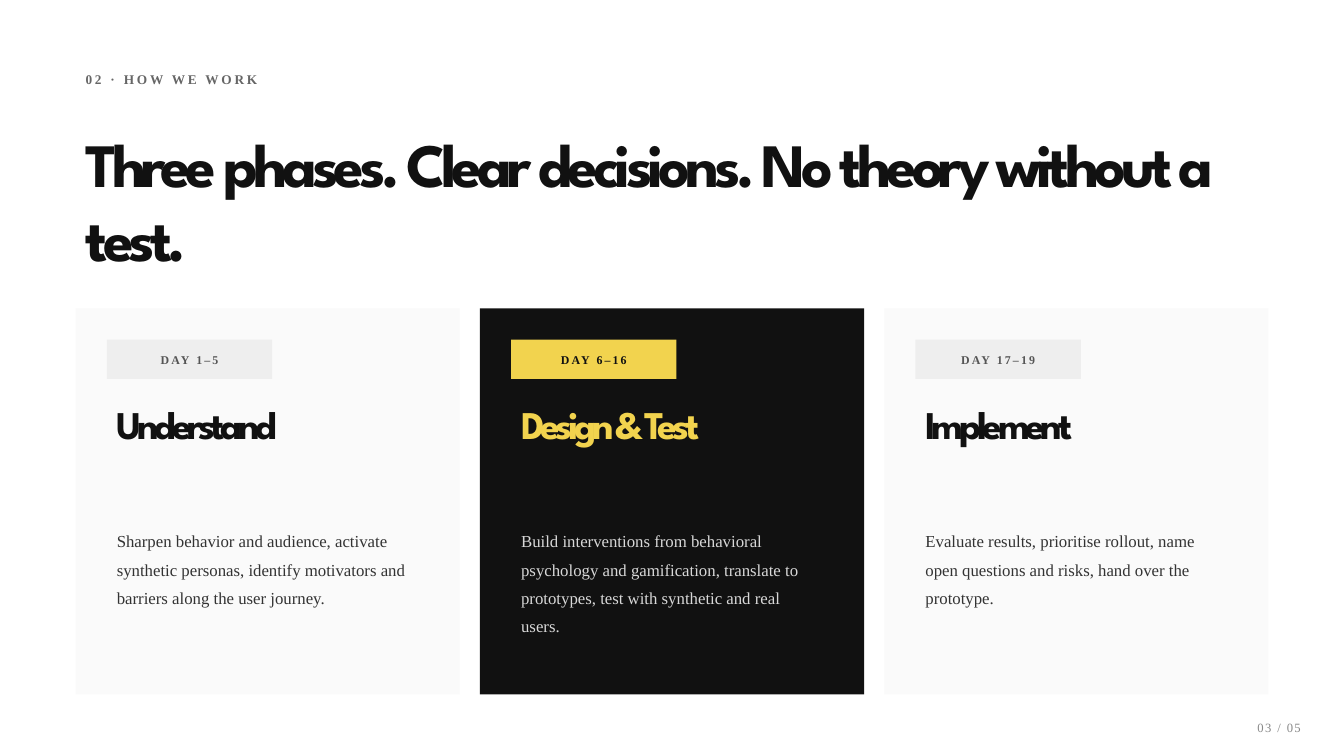
from dataclasses import dataclass

from pptx import Presentation
from pptx.dml.color import RGBColor
from pptx.enum.shapes import MSO_SHAPE as ShapeKind
from pptx.enum.text import MSO_ANCHOR as Anchor, MSO_AUTO_SIZE as AutoSize, PP_ALIGN as Align
from pptx.shapes.autoshape import Shape
from pptx.slide import Slide
from pptx.util import Inches, Pt

INK = RGBColor(0x11, 0x11, 0x11)
YELLOW = RGBColor(0xF2, 0xD3, 0x4E)
PALE = RGBColor(0xFA, 0xFA, 0xFA)
TAG_GREY = RGBColor(0xEE, 0xEE, 0xEE)
TAG_TEXT = RGBColor(0x55, 0x55, 0x55)
BODY_DARK = RGBColor(0x33, 0x33, 0x33)
BODY_LIGHT = RGBColor(0xD8, 0xD8, 0xD8)
EYEBROW_GREY = RGBColor(0x66, 0x66, 0x66)
PAGE_GREY = RGBColor(0x88, 0x88, 0x88)

DISPLAY = "League Spartan"
SERIF = "Times New Roman"

SLIDE_WIDTH, SLIDE_HEIGHT = 13.33, 7.5
MARGIN = 0.75
CONTENT_WIDTH = SLIDE_WIDTH - 2 * MARGIN
COLUMNS = 3
GUTTER = 0.2
COLUMN_WIDTH = (CONTENT_WIDTH - (COLUMNS - 1) * GUTTER) / COLUMNS
CARD_TOP, CARD_HEIGHT = 3.06, 3.83
CARD_PADDING = 0.31
INNER_WIDTH = COLUMN_WIDTH - 2 * CARD_PADDING


@dataclass(frozen=True)
class Box:
    left: float
    top: float
    width: float
    height: float


@dataclass(frozen=True)
class Style:
    font: str
    size: float
    bold: bool = False
    tracking: float = 0
    line_spacing: float = 1.0
    align: Align = Align.LEFT
    anchor: Anchor = Anchor.TOP


@dataclass(frozen=True)
class Theme:
    card: RGBColor
    tag: RGBColor
    tag_text: RGBColor
    heading: RGBColor
    body: RGBColor


@dataclass(frozen=True)
class Phase:
    days: str
    name: str
    description: str
    theme: Theme


EYEBROW = Style(SERIF, 9.5, bold=True, tracking=2)
TITLE = Style(DISPLAY, 44, bold=True, tracking=-3.5)
TAG = Style(SERIF, 8.5, bold=True, tracking=1.5, align=Align.CENTER, anchor=Anchor.MIDDLE)
HEADING = Style(DISPLAY, 28, bold=True, tracking=-3)
BODY = Style(SERIF, 12, line_spacing=1.4)
PAGE = Style(SERIF, 9, tracking=1, align=Align.RIGHT)

LIGHT = Theme(PALE, TAG_GREY, TAG_TEXT, INK, BODY_DARK)
DARK = Theme(INK, YELLOW, INK, YELLOW, BODY_LIGHT)

PHASES = (
    Phase("DAY 1–5", "Understand",
          "Sharpen behavior and audience, activate synthetic personas, "
          "identify motivators and barriers along the user journey.", LIGHT),
    Phase("DAY 6–16", "Design & Test",
          "Build interventions from behavioral psychology and gamification, "
          "translate to prototypes, test with synthetic and real users.", DARK),
    Phase("DAY 17–19", "Implement",
          "Evaluate results, prioritise rollout, name open questions and risks, "
          "hand over the prototype.", LIGHT),
)


def place(shape: Shape, box: Box) -> None:
    shape.left, shape.top = Inches(box.left), Inches(box.top)
    shape.width, shape.height = Inches(box.width), Inches(box.height)


def write(shape: Shape, text: str, style: Style, color: RGBColor) -> None:
    frame = shape.text_frame
    frame.word_wrap = True
    frame.auto_size = AutoSize.NONE
    frame.vertical_anchor = style.anchor
    paragraph = frame.paragraphs[0]
    paragraph.alignment = style.align
    paragraph.line_spacing = style.line_spacing
    run = paragraph.add_run()
    run.text = text
    run.font.name = style.font
    run.font.size = Pt(style.size)
    run.font.bold = style.bold
    run.font.color.rgb = color
    run._r.get_or_add_rPr().set("spc", str(round(style.tracking * 100)))


def add_text(slide: Slide, box: Box, text: str, style: Style, color: RGBColor) -> None:
    shape = slide.shapes.add_textbox(0, 0, 0, 0)
    place(shape, box)
    write(shape, text, style, color)


def add_panel(slide: Slide, box: Box, fill: RGBColor) -> Shape:
    shape = slide.shapes.add_shape(ShapeKind.RECTANGLE, 0, 0, 0, 0)
    place(shape, box)
    shape.shadow.inherit = False
    shape.fill.solid()
    shape.fill.fore_color.rgb = fill
    shape.line.fill.background()
    return shape


def add_phase(slide: Slide, column: int, phase: Phase) -> None:
    theme = phase.theme
    left = MARGIN + column * (COLUMN_WIDTH + GUTTER)
    inner = left + CARD_PADDING
    add_panel(slide, Box(left, CARD_TOP, COLUMN_WIDTH, CARD_HEIGHT), theme.card)
    tag = add_panel(slide, Box(inner, CARD_TOP + CARD_PADDING, 1.64, 0.39), theme.tag)
    write(tag, phase.days, TAG, theme.tag_text)
    add_text(slide, Box(inner, CARD_TOP + 0.86, INNER_WIDTH, 1.09),
             phase.name, HEADING, theme.heading)
    add_text(slide, Box(inner, CARD_TOP + 2.08, INNER_WIDTH, 1.53),
             phase.description, BODY, theme.body)


def main() -> None:
    presentation = Presentation()
    presentation.slide_width = Inches(SLIDE_WIDTH)
    presentation.slide_height = Inches(SLIDE_HEIGHT)
    slide = presentation.slides.add_slide(presentation.slide_layouts.get_by_name("Title Only"))

    add_text(slide, Box(MARGIN, 0.66, CONTENT_WIDTH, 0.39),
             "02 · HOW WE WORK", EYEBROW, EYEBROW_GREY)
    title = slide.shapes.title
    place(title, Box(MARGIN, 1.2, CONTENT_WIDTH, 1.31))
    write(title, "Three phases. Clear decisions. No theory without a test.", TITLE, INK)

    for column, phase in enumerate(PHASES):
        add_phase(slide, column, phase)

    add_text(slide, Box(12.08, 7.09, 0.92, 0.31), "03 / 05", PAGE, PAGE_GREY)
    presentation.save("out.pptx")


if __name__ == "__main__":
    main()
